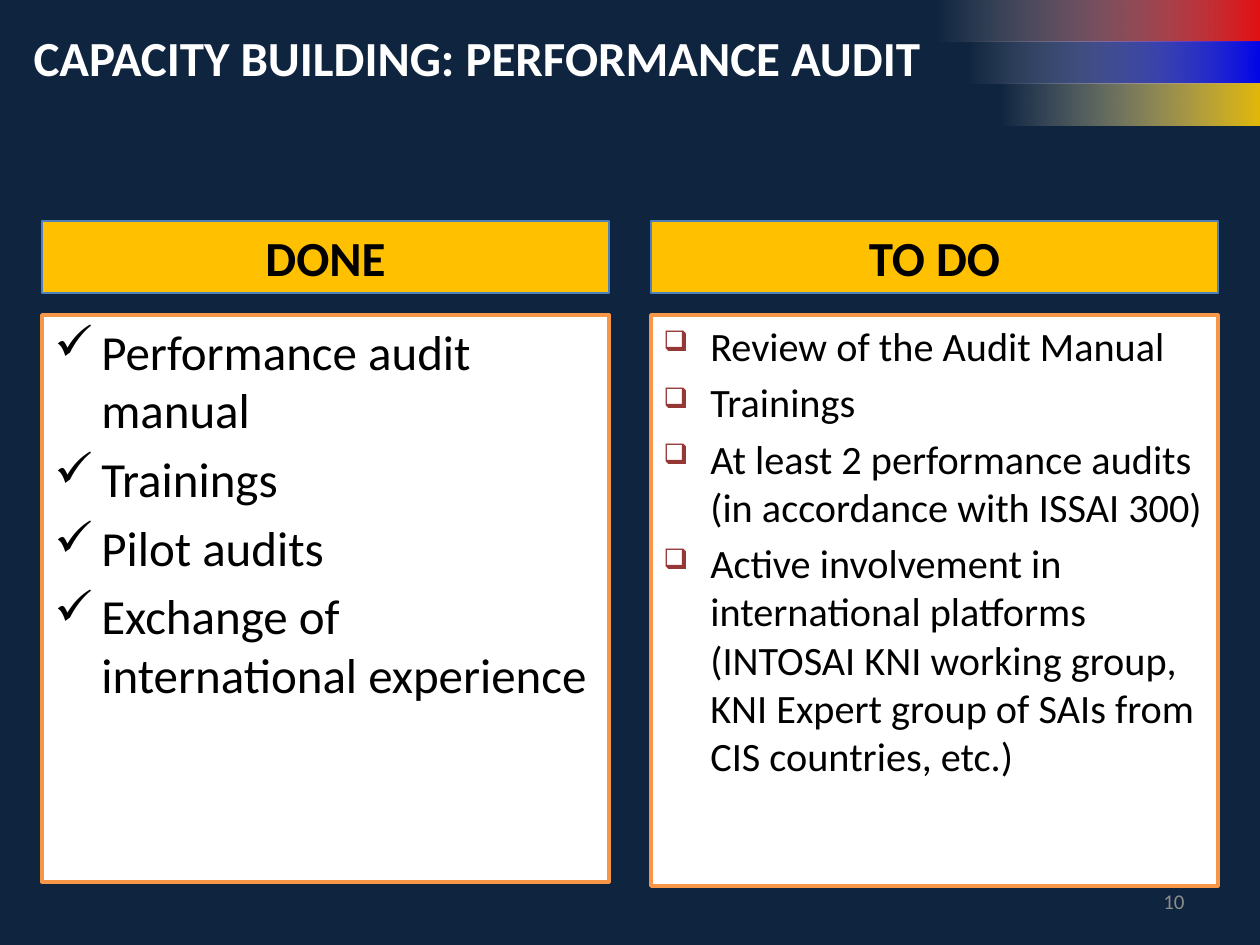
import pptx
import pptx.util
import pptx.dml.color
import pptx.enum.shapes
import pptx.enum.text
import lxml.etree

SCALE = 914400 / 126
NAMESPACE = "{http://schemas.openxmlformats.org/drawingml/2006/main}"
ALIGN = pptx.enum.text.PP_ALIGN
ANCHOR = pptx.enum.text.MSO_ANCHOR


def px(length):
    return pptx.util.Emu(round(length * SCALE))


def color(value):
    return pptx.dml.color.RGBColor.from_string(value)


def add_xml(parent, tag, **attributes):
    return lxml.etree.SubElement(parent, NAMESPACE + tag, attributes)


def write(para, text, size, fill="000000", bold=False, align=ALIGN.LEFT):
    para.alignment = align
    span = para.add_run()
    span.text = text
    span.font.name = "Calibri"
    span.font.size = pptx.util.Pt(size)
    span.font.bold = bold
    span.font.color.rgb = color(fill)


def add_bullet(para, mark, mark_color=None, mark_size=100):
    properties = para._p.get_or_add_pPr()
    properties.set("marL", str(px(47)))
    properties.set("indent", str(-px(47)))
    if mark_color:
        add_xml(add_xml(properties, "buClr"), "srgbClr", val=mark_color)
    add_xml(properties, "buSzPct", val=str(mark_size * 1000))
    add_xml(properties, "buChar", char=mark)


def add_box(page, left, top, width, height):
    box = page.shapes.add_shape(
        pptx.enum.shapes.MSO_SHAPE.RECTANGLE, px(left), px(top), px(width), px(height))
    box.shadow.inherit = False
    return box


def add_panel(page, left, top, width, height, fill, line, line_width, anchor):
    box = add_box(page, left, top, width, height)
    box.fill.solid()
    box.fill.fore_color.rgb = color(fill)
    box.line.color.rgb = color(line)
    box.line.width = pptx.util.Pt(line_width)
    box.text_frame.word_wrap = True
    box.text_frame.vertical_anchor = anchor
    return box.text_frame


def add_title(page, left, top, width, height, text):
    title = page.shapes.title
    title.left, title.top = px(left), px(top)
    title.width, title.height = px(width), px(height)
    title.text_frame.vertical_anchor = ANCHOR.TOP
    title.text_frame.word_wrap = True
    write(title.text_frame.paragraphs[0], text, 28, "FFFFFF", bold=True)


def add_column(page, left, top, width, height, heading, items, size, **bullet):
    header = add_panel(page, left, top, width, 72, "FFC000", "4F81BD", 0.75, ANCHOR.MIDDLE)
    write(header.paragraphs[0], heading, 28, bold=True, align=ALIGN.CENTER)
    body = add_panel(page, left, top + 94, width, height - 94, "FFFFFF", "F79646", 2, ANCHOR.TOP)
    for index, item in enumerate(items):
        para = body.add_paragraph() if index else body.paragraphs[0]
        para.space_before = pptx.util.Pt(size * 0.2)
        write(para, item, size)
        add_bullet(para, **bullet)


def add_bands(page, left, top, width, height, colors):
    band_height = height / len(colors)
    for index, value in enumerate(colors):
        shift = index * 32
        band = add_box(page, left + shift, top + index * band_height, width - shift, band_height)
        band.line.fill.background()
        band.fill.gradient()
        band.fill.gradient_angle = 0
        stops = zip(band.fill.gradient_stops, (0, 1), ("FFFFFF", value), (0, 89))
        for stop, position, stop_color, opacity in stops:
            stop.position = position
            stop.color.rgb = color(stop_color)
        for node, opacity in zip(band._element.spPr.iter(NAMESPACE + "srgbClr"), (0, 89)):
            add_xml(node, "alpha", val=str(opacity * 1000))


def add_page_number(page, left, top, width, height, number):
    box = page.shapes.add_textbox(px(left), px(top), px(width), px(height))
    box.text_frame.word_wrap = True
    box.text_frame.vertical_anchor = ANCHOR.MIDDLE
    write(box.text_frame.paragraphs[0], number, 12, "8C8C8C", align=ALIGN.RIGHT)


def main():
    deck = pptx.Presentation()
    deck.slide_width, deck.slide_height = px(1260), px(945)
    page = deck.slides.add_slide(deck.slide_layouts[5])
    page.background.fill.solid()
    page.background.fill.fore_color.rgb = color("0F243E")

    add_title(page, 21, 21, 1134, 158, "CAPACITY BUILDING: PERFORMANCE AUDIT")
    add_page_number(page, 903, 876, 294, 50, "10")
    done = [
        "Performance audit manual",
        "Trainings",
        "Pilot audits",
        "Exchange of international experience",
    ]
    to_do = [
        "Review of the Audit Manual",
        "Trainings",
        "At least 2 performance audits (in accordance with ISSAI 300)",
        "Active involvement in international platforms (INTOSAI KNI working group, "
        "KNI Expert group of SAIs from CIS countries, etc.)",
    ]
    add_column(page, 42, 221, 567, 661, "DONE", done, 28, mark="✓")
    add_column(page, 651, 221, 567, 665, "TO DO", to_do, 23,
               mark="❑", mark_color="953735", mark_size=70)
    add_bands(page, 935, 0, 327, 126, ["FF0D0D", "0000FF", "FFCC00"])
    deck.save("out.pptx")


if __name__ == "__main__":
    main()
